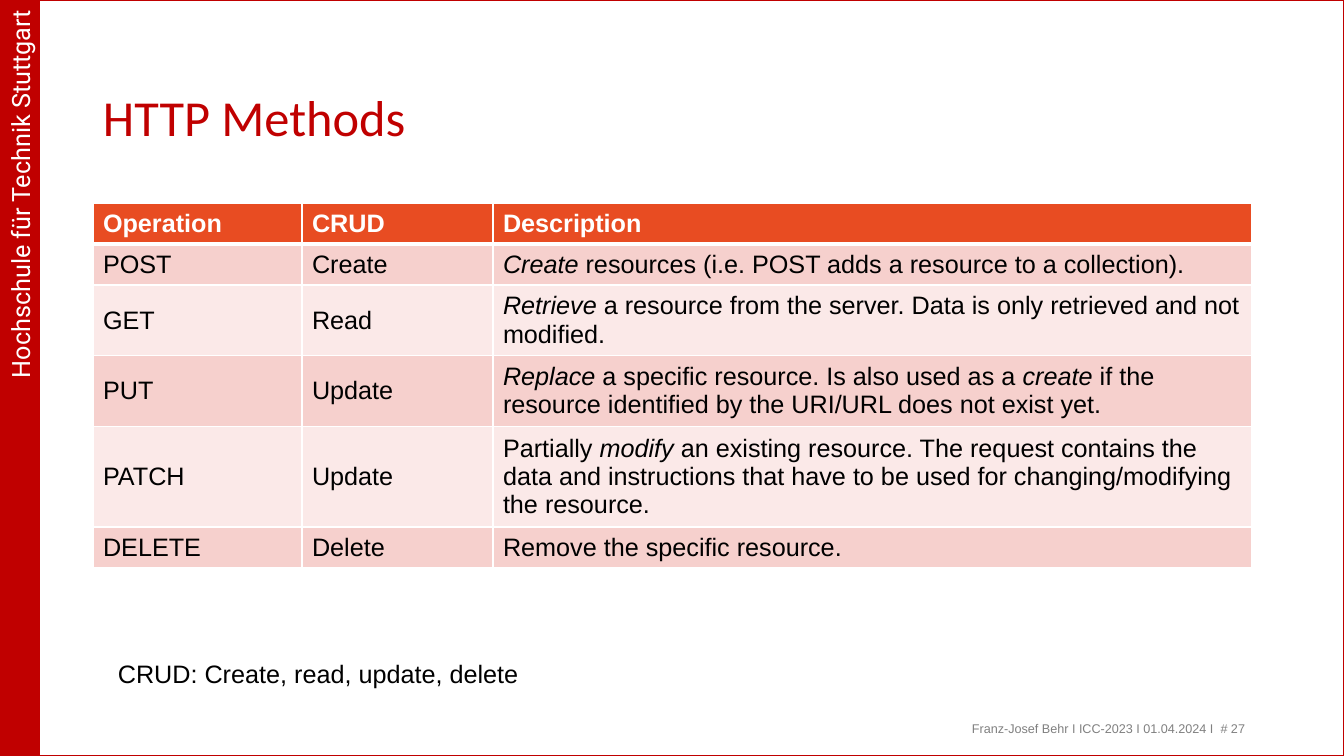
"""Build the HTTP Methods slide with its table of CRUD operations."""
from lxml.etree import SubElement
from pptx import Presentation
from pptx.dml.color import RGBColor
from pptx.enum.shapes import MSO_SHAPE as Preset
from pptx.enum.text import MSO_ANCHOR as Anchor, PP_ALIGN as Align
from pptx.oxml.ns import qn
from pptx.util import Pt

RED = RGBColor(0xC0, 0x00, 0x00)
ORANGE = RGBColor(0xE8, 0x4C, 0x22)
PINK = RGBColor(0xF6, 0xD0, 0xCD)
PALE_PINK = RGBColor(0xFB, 0xE9, 0xE8)
WHITE = RGBColor(0xFF, 0xFF, 0xFF)
GREY = RGBColor(0x80, 0x80, 0x80)
BLACK = RGBColor(0x00, 0x00, 0x00)

SCHOOL = "Hochschule für Technik Stuttgart"
FOOTER = "Franz-Josef Behr I ICC-2023 I 01.04.2024 I  # 27"
TITLE = "HTTP Methods"
NOTE = "CRUD: Create, read, update, delete"
ITALIC_MARK = "*"
METHODS = [
    ("Operation", "CRUD", "Description"),
    ("POST", "Create", "*Create* resources (i.e. POST adds a resource to a collection)."),
    ("GET", "Read", "*Retrieve* a resource from the server. Data is only retrieved and not modified."),
    ("PUT", "Update", "*Replace* a specific resource. Is also used as a *create *if the "
     "resource identified by the URI/URL does not exist yet."),
    ("PATCH", "Update", "Partially *modify* an existing resource. The request contains the data and "
     "instructions that have to be used for changing/modifying the resource."),
    ("DELETE", "Delete", "Remove the specific resource."),
]

SLIDE_W, SLIDE_H = 1344, 756
BAR_W = 40
TABLE_LEFT, TABLE_TOP = 93, 203
COLUMN_WIDTHS = (209, 191, 759)
ROW_H = 41
EMU_PER_PX = 914400 / 100.8


def px(*lengths):
    return [round(length * EMU_PER_PX) for length in lengths]


def apply(target, **values):
    for name, value in values.items():
        setattr(target, name, value)


def write(frame, text, size, color, font="Arial", bold=False, **paragraph_format):
    paragraph = frame.paragraphs[0]
    apply(paragraph, **paragraph_format)
    for index, part in enumerate(text.split(ITALIC_MARK)):
        if part:
            run = paragraph.add_run()
            run.text = part
            apply(run.font, name=font, size=Pt(size), bold=bold, italic=index % 2 == 1)
            run.font.color.rgb = color


def add_text(slide, box, text, size, color, font="Arial", wrap=True, anchor=Anchor.TOP, **paragraph_format):
    frame = slide.shapes.add_textbox(*px(*box)).text_frame
    apply(frame, word_wrap=wrap, vertical_anchor=anchor)
    write(frame, text, size, color, font, **paragraph_format)


def add_box(slide, box, line_width):
    shape = slide.shapes.add_shape(Preset.RECTANGLE, *px(*box))
    shape.shadow.inherit = False
    shape.line.color.rgb = RED
    shape.line.width = Pt(line_width)
    return shape


def add_borders(cell, **widths):
    properties = cell._tc.get_or_add_tcPr()
    for side, width in widths.items():
        line = SubElement(properties, qn(f"a:ln{side}"), w=str(Pt(width)))
        fill = SubElement(line, qn("a:solidFill"))
        SubElement(fill, qn("a:srgbClr"), val=str(WHITE))


def add_methods_table(slide):
    box = px(TABLE_LEFT, TABLE_TOP, sum(COLUMN_WIDTHS), ROW_H * len(METHODS))
    table = slide.shapes.add_table(len(METHODS), len(COLUMN_WIDTHS), *box).table
    for column, width in zip(table.columns, px(*COLUMN_WIDTHS)):
        column.width = width
    for row, method in enumerate(METHODS):
        header = row == 0
        for column, text in enumerate(method):
            cell = table.cell(row, column)
            cell.vertical_anchor = Anchor.MIDDLE
            add_borders(cell, L=1, R=1, T=3 if row == 1 else 1, B=3 if header else 1)
            cell.fill.solid()
            cell.fill.fore_color.rgb = ORANGE if header else (PALE_PINK, PINK)[row % 2]
            write(cell.text_frame, text, 18, WHITE if header else BLACK, bold=header)


def main():
    deck = Presentation()
    deck.slide_width, deck.slide_height = px(SLIDE_W, SLIDE_H)
    slide = deck.slides.add_slide(deck.slide_layouts[6])

    offset = (SLIDE_H - BAR_W) // 2
    bar = add_box(slide, (-offset, offset, SLIDE_H, BAR_W), 0.75)
    bar.rotation = 270
    bar.fill.solid()
    bar.fill.fore_color.rgb = RED
    write(bar.text_frame, SCHOOL, 18, WHITE, "Roboto", alignment=Align.RIGHT)

    add_text(slide, (962, 718, 347, 31), FOOTER, 9, GREY, line_spacing=0.9, space_before=Pt(10))
    add_box(slide, (0, 0, SLIDE_W, SLIDE_H), 1).fill.background()
    add_text(slide, (93, 55, 1159, 130), TITLE, 36, RED, "Calibri", anchor=Anchor.MIDDLE, line_spacing=0.9)
    add_methods_table(slide)
    add_text(slide, (108, 653, 424, 40), NOTE, 18, BLACK, wrap=False)
    deck.save("out.pptx")


if __name__ == "__main__":
    main()
